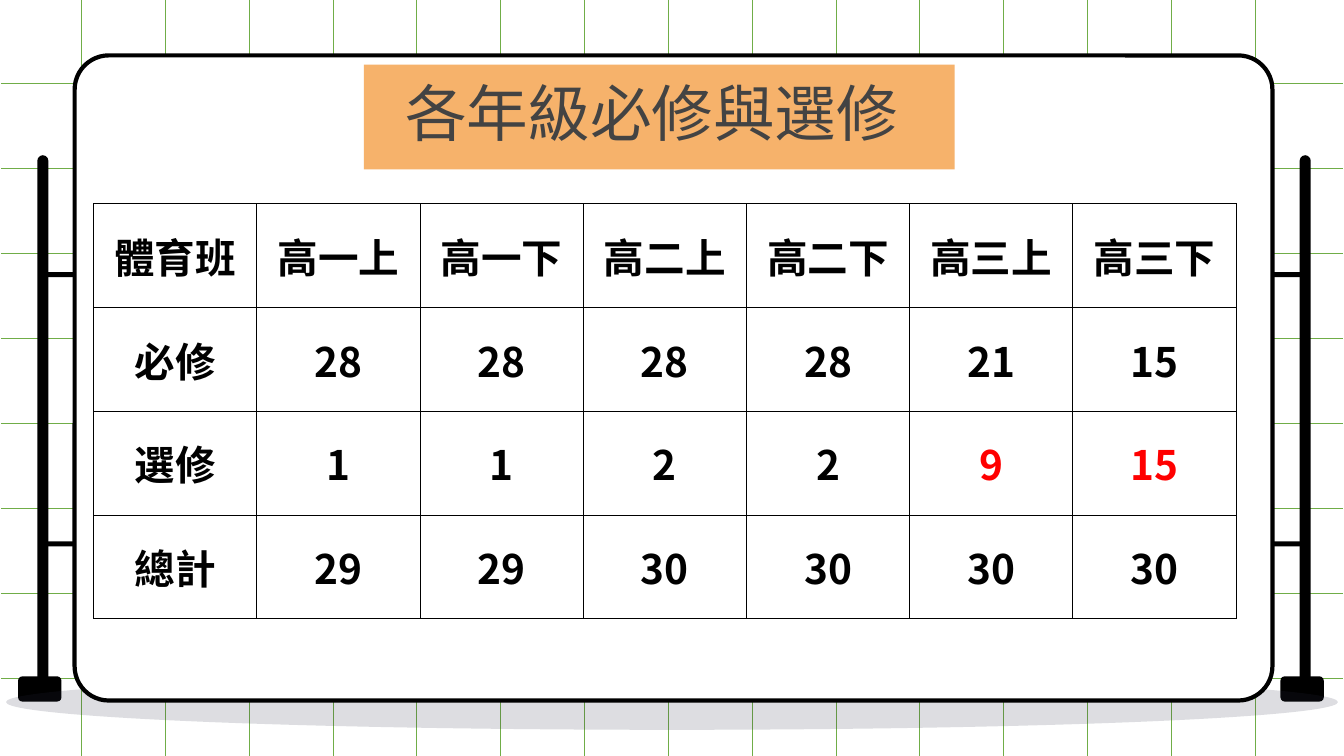
import pptx
import pptx.util
import pptx.dml.color
import pptx.enum.shapes
import pptx.enum.text
import pptx.oxml
import pptx.oxml.ns
from pptx.util import Inches

FONT = "Noto Sans CJK TC"
SHAPE = pptx.enum.shapes.MSO_SHAPE
ALIGN = pptx.enum.text.PP_ALIGN
MIDDLE = pptx.enum.text.MSO_ANCHOR.MIDDLE
NS = pptx.oxml.ns.nsdecls("a")
INSET = Inches(0.13)

CREDITS = [
    ["體育班", "高一上", "高一下", "高二上", "高二下", "高三上", "高三下"],
    ["必修", "28", "28", "28", "28", "21", "15"],
    ["選修", "1", "1", "2", "2", "9", "15"],
    ["總計", "29", "29", "30", "30", "30", "30"],
]
RED_CELLS = {(2, 5), (2, 6)}


def rgb(color):
    return pptx.dml.color.RGBColor.from_string(color)


def set_insets(box):
    box.margin_left = box.margin_right = INSET
    box.margin_top = box.margin_bottom = INSET
    box.vertical_anchor = MIDDLE


def style_text(p, size, color, align, bold=False):
    """Format a paragraph, covering Latin and East Asian glyphs alike."""
    p.alignment = align
    f = p.font
    f.size, f.bold, f.name = pptx.util.Pt(size), bold, FONT
    f.color.rgb = rgb(color)
    props = p._p.pPr.find(pptx.oxml.ns.qn("a:defRPr"))
    props.append(pptx.oxml.parse_xml(f'<a:ea {NS} typeface="{FONT}"/>'))


def add_grid_line(s, x1, y1, x2, y2):
    line = s.shapes.add_connector(
        pptx.enum.shapes.MSO_CONNECTOR.STRAIGHT,
        Inches(x1), Inches(y1), Inches(x2), Inches(y2))
    line.line.color.rgb = rgb("70AD47")
    line.line.width = pptx.util.Pt(0.75)
    line._element.spPr.append(pptx.oxml.parse_xml(f"<a:effectLst {NS}/>"))


def add_grid(s):
    for i in range(15):
        x = 0.81 + i * 11.64 / 14
        add_grid_line(s, x, -0.02, x, 7.55)
    for i in range(8):
        y = 0.83 + i * 5.9 / 7
        add_grid_line(s, 13.32, y, 0.01, y)


def add_block(s, kind, at, fill, corner=None, line=None, alpha=None):
    sp = s.shapes.add_shape(kind, *map(Inches, at))
    sp.shadow.inherit = False
    if corner is not None:
        sp.adjustments[0] = corner
    sp.fill.solid()
    sp.fill.fore_color.rgb = rgb(fill)
    if alpha is not None:
        clr = sp._element.spPr.find(".//" + pptx.oxml.ns.qn("a:srgbClr"))
        clr.append(pptx.oxml.parse_xml(f'<a:alpha {NS} val="{alpha * 1000}"/>'))
    if line:
        sp.line.color.rgb = rgb(line)
        sp.line.width = pptx.util.Pt(3)
    else:
        sp.line.fill.background()


def add_whiteboard(s):
    rounded = SHAPE.ROUNDED_RECTANGLE
    for y in (5.37, 2.7):
        add_block(s, rounded, (0.4, y, 12.56, 0.05), "000000", 0.167)
    for x in (12.7, 0.18):
        add_block(s, rounded, (x + 0.19, 1.54, 0.11, 5.24), "000000", 0.5)
        add_block(s, rounded, (x, 6.71, 0.43, 0.25), "000000", 0.167)
    add_block(s, SHAPE.OVAL, (0.06, 6.69, 13.21, 0.55), "2C3045", alpha=16)
    add_block(s, rounded, (0.74, 0.55, 11.88, 6.4), "FFFFFF", 0.053, "000000")


def add_title(s, text):
    title = s.shapes.title
    s.shapes._spTree.append(title._element)  # bring in front of the board
    title.left, title.top = Inches(3.61), Inches(0.64)
    title.width, title.height = Inches(5.86), Inches(1.04)
    title.fill.solid()
    title.fill.fore_color.rgb = rgb("F6B26B")
    tf = title.text_frame
    tf.text = text
    tf.word_wrap = True
    tf.auto_size = pptx.enum.text.MSO_AUTO_SIZE.NONE
    set_insets(tf)
    tf.margin_left = INSET + Inches(0.28)
    p = tf.paragraphs[0]
    p.line_spacing = 0.9
    style_text(p, 44, "434343", ALIGN.LEFT)


def add_borders(cell):
    props = cell._tc.get_or_add_tcPr()
    for i, side in enumerate("LRTB"):
        props.insert(i, pptx.oxml.parse_xml(
            f'<a:ln{side} {NS} w="9525"><a:solidFill>'
            f'<a:srgbClr val="000000"/></a:solidFill></a:ln{side}>'))


def add_credit_table(s):
    table = s.shapes.add_table(
        len(CREDITS), len(CREDITS[0]),
        Inches(0.93), Inches(2.02), Inches(11.33), Inches(4.12)).table
    table.first_row = table.horz_banding = False
    for r, row in enumerate(CREDITS):
        for c, text in enumerate(row):
            cell = table.cell(r, c)
            cell.text = text
            cell.fill.background()
            set_insets(cell)
            add_borders(cell)
            color = "FF0000" if (r, c) in RED_CELLS else "000000"
            style_text(cell.text_frame.paragraphs[0], 29, color,
                       ALIGN.CENTER, bold=True)


def main():
    prs = pptx.Presentation()
    prs.slide_width, prs.slide_height = Inches(13.33), Inches(7.5)
    s = prs.slides.add_slide(prs.slide_layouts[5])
    add_grid(s)
    add_whiteboard(s)
    add_title(s, "各年級必修與選修")
    add_credit_table(s)
    prs.save("out.pptx")


if __name__ == "__main__":
    main()
